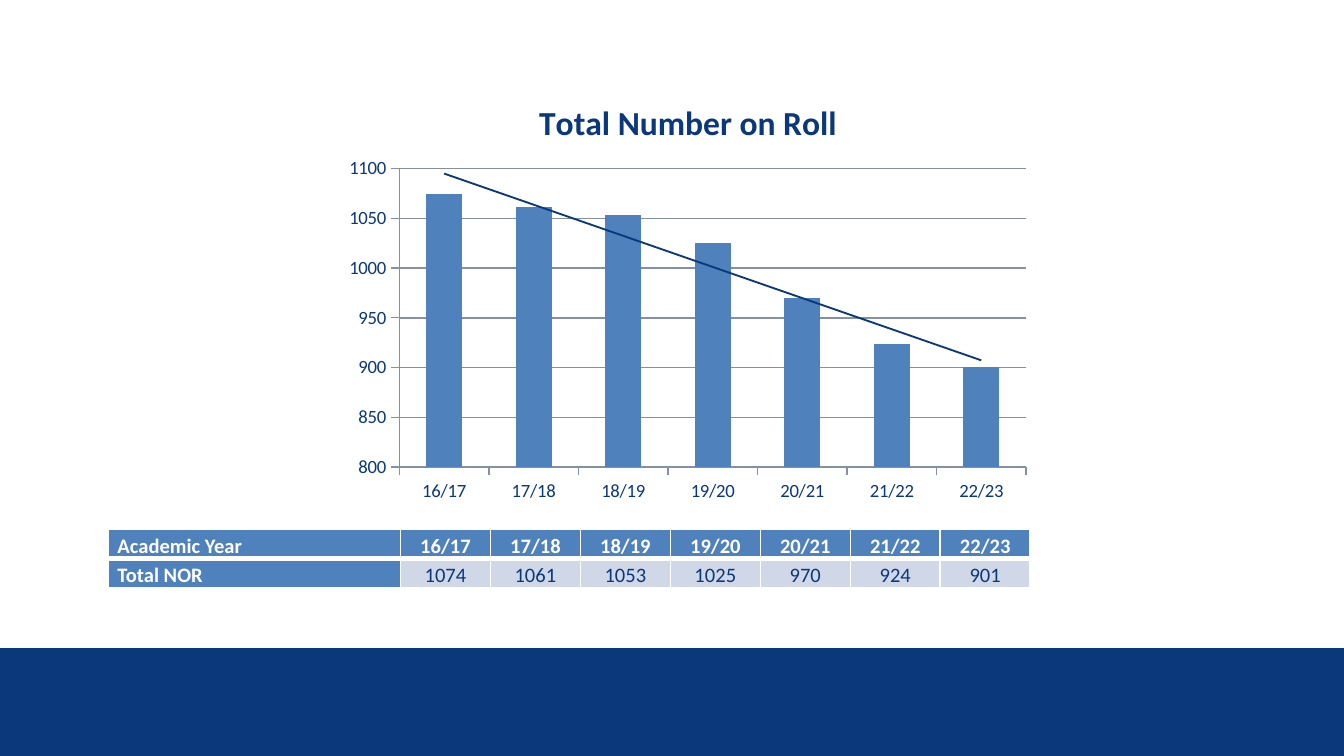
import lxml.etree
import pptx
import pptx.chart.data
import pptx.dml.color
import pptx.enum.chart
import pptx.enum.shapes
import pptx.enum.text
import pptx.oxml
import pptx.oxml.ns
import pptx.util
from pptx.util import Cm

NAVY, BLUE, PALE, WHITE, GRID = "0A387A", "4F81BD", "D0D8E8", "FFFFFF", "848FA9"
YEARS = ["16/17", "17/18", "18/19", "19/20", "20/21", "21/22", "22/23"]
ROLL = [1074, 1061, 1053, 1025, 970, 924, 901]


def color(hex_string):
    return pptx.dml.color.RGBColor.from_string(hex_string)


def write_text(text_frame, text, size=11, fill=NAVY, bold=False, align=None, spacing=None):
    paragraph = text_frame.paragraphs[0]
    paragraph.alignment = align
    paragraph.line_spacing = spacing
    run = paragraph.add_run()
    run.text = text
    run.font.name = "Calibri"
    run.font.size = pptx.util.Pt(size)
    run.font.bold = bold
    run.font.color.rgb = color(fill)


presentation = pptx.Presentation()
presentation.slide_width = Cm(25.4)
presentation.slide_height = Cm(14.29)
slide = presentation.slides.add_slide(presentation.slide_layouts[6])

# Footer band
band = slide.shapes.add_shape(
    pptx.enum.shapes.MSO_SHAPE.RECTANGLE, 0, Cm(12.25), Cm(25.4), Cm(2.04))
band.shadow.inherit = False
band.fill.solid()
band.fill.fore_color.rgb = color(NAVY)
band.line.fill.background()

# Table of numbers on roll
rows = [["Academic Year", *YEARS], ["Total NOR", *ROLL]]
table = slide.shapes.add_table(
    2, len(YEARS) + 1, Cm(2.04), Cm(10.01), Cm(17.43), Cm(1.08)).table
for index, column in enumerate(table.columns):
    column.width = Cm(5.53 if index == 0 else 1.7)
for row_index, values in enumerate(rows):
    table.rows[row_index].height = Cm(0.54)
    for column_index, value in enumerate(values):
        cell = table.cell(row_index, column_index)
        is_header = row_index == 0 or column_index == 0
        is_year = row_index == 0 and column_index > 0
        cell.margin_left = cell.margin_right = Cm(0.18)
        cell.margin_top = cell.margin_bottom = 0
        anchors = pptx.enum.text.MSO_ANCHOR
        cell.vertical_anchor = anchors.MIDDLE if is_year else anchors.BOTTOM
        thick_side = "B" if row_index == 0 else "T"
        for side in "LRTB":
            points = 3 if side == thick_side else 1
            cell._tc.get_or_add_tcPr().append(pptx.oxml.parse_xml(
                f'<a:ln{side} {pptx.oxml.ns.nsdecls("a")} w="{pptx.util.Pt(points)}">'
                f'<a:solidFill><a:srgbClr val="{WHITE}"/></a:solidFill></a:ln{side}>'))
        cell.fill.solid()
        cell.fill.fore_color.rgb = color(BLUE if is_header else PALE)
        write_text(
            cell.text_frame, str(value), fill=WHITE if is_header else NAVY, bold=is_header,
            align=pptx.enum.text.PP_ALIGN.CENTER if column_index else None, spacing=1.15)

# Column chart with a linear trend
chart_data = pptx.chart.data.CategoryChartData()
chart_data.categories = YEARS
chart_data.add_series("Series 1", ROLL)
chart = slide.shapes.add_chart(
    pptx.enum.chart.XL_CHART_TYPE.COLUMN_CLUSTERED,
    Cm(6.35), Cm(1.47), Cm(13.31), Cm(8.18), chart_data).chart
chart.has_legend = False
chart.font.name = "Calibri"
chart.font.size = pptx.util.Pt(10)
chart.font.color.rgb = color(NAVY)
chart.has_title = True
write_text(chart.chart_title.text_frame, "Total Number on Roll", size=18, bold=True)
chart.chart_title.include_in_layout = False

plot = chart.plots[0]
plot.gap_width = 150
plot.vary_by_categories = False
series = plot.series[0]
series.format.fill.solid()
series.format.fill.fore_color.rgb = color(BLUE)

value_axis = chart.value_axis
value_axis.minimum_scale = 800
value_axis.maximum_scale = 1100
value_axis.major_unit = 50
value_axis.has_major_gridlines = True
for axis in (chart.category_axis, value_axis):
    axis.major_tick_mark = pptx.enum.chart.XL_TICK_MARK.OUTSIDE
for line in (chart.category_axis.format.line, value_axis.format.line,
             value_axis.major_gridlines.format.line):
    line.color.rgb = color(GRID)
    line.width = pptx.util.Pt(0.75)

trend = pptx.oxml.parse_xml(
    f'<c:trendline {pptx.oxml.ns.nsdecls("c", "a")}><c:spPr><a:ln w="{pptx.util.Pt(1)}">'
    f'<a:solidFill><a:srgbClr val="{NAVY}"/></a:solidFill></a:ln></c:spPr>'
    '<c:trendlineType val="linear"/><c:dispRSqr val="0"/><c:dispEq val="0"/></c:trendline>')
series._element.find(pptx.oxml.ns.qn("c:cat")).addprevious(trend)

plot_area = chart._chartSpace.chart.plotArea
for layout in plot_area.findall(pptx.oxml.ns.qn("c:layout")):
    plot_area.remove(layout)
position = "".join(
    f'<c:{name} val="{value}"/>' for name, value in
    [("layoutTarget", "inner"), ("xMode", "edge"), ("yMode", "edge"),
     ("x", 0.09), ("y", 0.21), ("w", 0.89), ("h", 0.69)])
plot_area.insert(0, pptx.oxml.parse_xml(
    f'<c:layout {pptx.oxml.ns.nsdecls("c")}><c:manualLayout>{position}</c:manualLayout></c:layout>'))

presentation.save("out.pptx")
